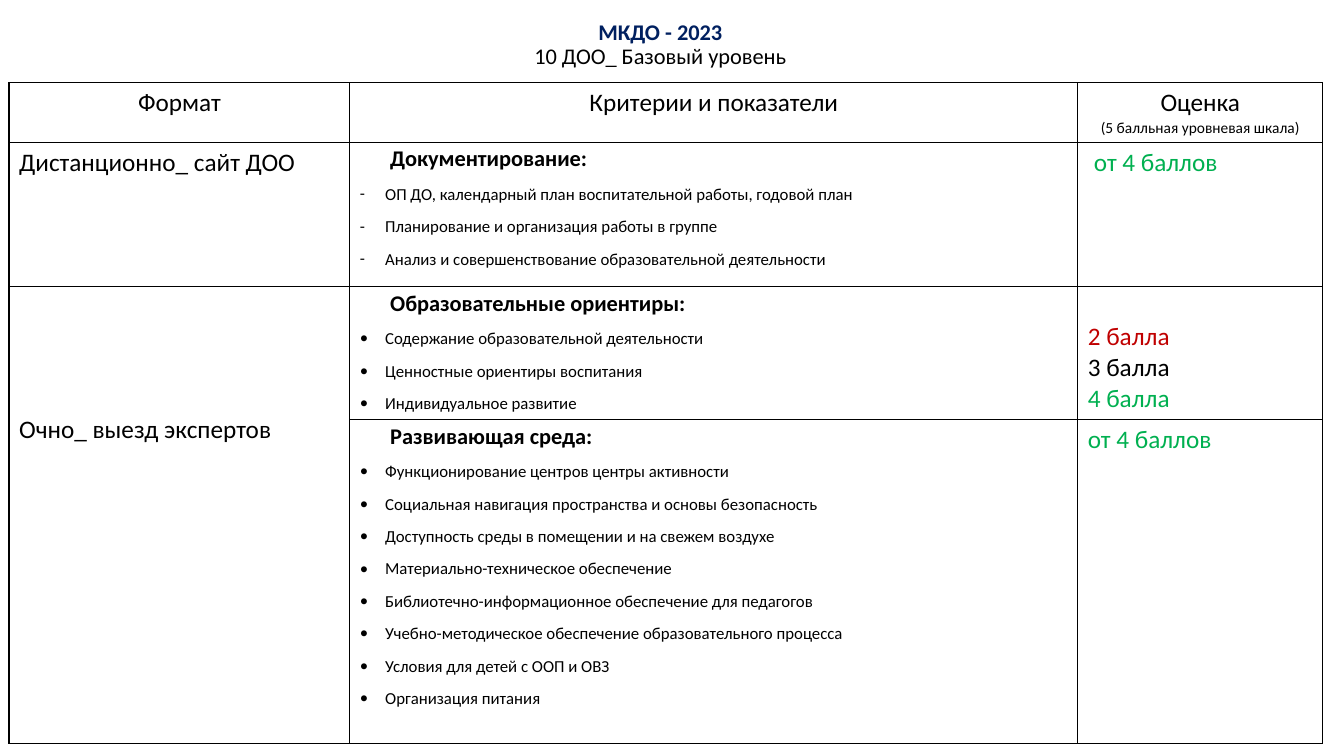
from pptx import Presentation
from pptx.util import Inches, Pt
from pptx.dml.color import RGBColor as Rgb
from pptx.enum.text import PP_ALIGN as Al, MSO_ANCHOR as Anchor
from pptx.oxml import parse_xml
from pptx.oxml.ns import nsdecls

INK = {"black": "000000", "white": "FFFFFF", "navy": "002060",
       "green": "00B050", "red": "C00000"}


class Deck:
    font = "Calibri"

    def __init__(self):
        self.prs = Presentation()
        self.prs.slide_width, self.prs.slide_height = Inches(13.33), Inches(7.5)
        self.slide = self.prs.slides.add_slide(self.prs.slide_layouts[6])

    def para(self, frame, text, size=18, color="black", bold=False, align=Al.LEFT,
             line=None, before=None, left=0, hang=0, mark=None):
        first = frame.paragraphs[0]
        par = frame.add_paragraph() if first.runs else first
        par.alignment = align
        if line:
            par.line_spacing = line
        if before:
            par.space_before = Pt(before)
        run = par.add_run()
        run.text = text
        run.font.name, run.font.size, run.font.bold = self.font, Pt(size), bold
        run.font.color.rgb = Rgb.from_string(INK[color])
        props = par._p.get_or_add_pPr()
        props.set("marL", str(Inches(left)))
        props.set("indent", str(Inches(hang)))
        if mark:
            props.append(parse_xml(f'<a:buFont {nsdecls("a")} typeface="{self.font}"/>'))
            props.append(parse_xml(f'<a:buChar {nsdecls("a")} char="{mark}"/>'))

    def title(self, x, y, w, h, lines):
        frame = self.slide.shapes.add_textbox(
            Inches(x), Inches(y), Inches(w), Inches(h)).text_frame
        frame.word_wrap = True
        frame.vertical_anchor = Anchor.TOP
        frame.margin_top = frame.margin_bottom = 0
        for text, color, bold in lines:
            self.para(frame, text, 16, color, bold, Al.CENTER, 0.9)

    def table(self, x, y, cols, rows):
        grid = self.slide.shapes.add_table(
            len(rows), len(cols), Inches(x), Inches(y),
            Inches(sum(cols)), Inches(sum(rows))).table
        grid.first_row = grid.horz_banding = False
        for col, wide in zip(grid.columns, cols):
            col.width = Inches(wide)
        for row, high in zip(grid.rows, rows):
            row.height = Inches(high)
        for cell in grid.iter_cells():
            self.frame(cell)
        return grid

    def frame(self, cell):
        cell.fill.solid()
        cell.fill.fore_color.rgb = Rgb.from_string(INK["white"])
        props = cell._tc.get_or_add_tcPr()
        for spot, side in enumerate("LRTB"):
            props.insert(spot, parse_xml(
                f'<a:ln{side} {nsdecls("a")} w="{Pt(1)}"><a:solidFill>'
                f'<a:srgbClr val="{INK["black"]}"/></a:solidFill></a:ln{side}>'))

    def topic(self, cell, head, items, mark):
        frame = cell.text_frame
        self.para(frame, head, 16, bold=True, line=0.9, before=10, left=0.3)
        for item in items:
            self.para(frame, item, 12, line=0.9, before=10,
                      left=0.25, hang=-0.25, mark=mark)


def main():
    deck = Deck()

    # Title
    deck.title(0.68, 0.21, 11.74, 0.55, [
        ("МКДО - 2023", "navy", True),
        ("10 ДОО_ Базовый уровень", "black", False)])

    # Table grid
    grid = deck.table(0.09, 0.82, [3.38, 7.22, 2.43], [0.59, 1.43, 1.32, 3.22])
    grid.cell(2, 0).merge(grid.cell(3, 0))

    # Header row
    for col, text in enumerate(["Формат", "Критерии и показатели", "Оценка"]):
        deck.para(grid.cell(0, col).text_frame, text, align=Al.CENTER)
    deck.para(grid.cell(0, 2).text_frame, "(5 балльная уровневая шкала)", 11,
              align=Al.CENTER)

    # Formats
    deck.para(grid.cell(1, 0).text_frame, "Дистанционно_ сайт ДОО")
    visit = grid.cell(2, 0)
    visit.margin_top = Inches(1.27)
    deck.para(visit.text_frame, "Очно_ выезд экспертов")

    # Criteria
    topics = [
        ("Документирование:", "-", [
            "ОП ДО, календарный план воспитательной работы, годовой план",
            "Планирование и организация работы в группе",
            "Анализ и совершенствование образовательной деятельности"]),
        ("Образовательные ориентиры:", "•", [
            "Содержание образовательной деятельности",
            "Ценностные ориентиры воспитания",
            "Индивидуальное развитие"]),
        ("Развивающая среда:", "•", [
            "Функционирование центров центры активности",
            "Социальная навигация пространства и основы безопасность",
            "Доступность среды в помещении и на свежем воздухе",
            "Материально-техническое обеспечение",
            "Библиотечно-информационное обеспечение для педагогов",
            "Учебно-методическое обеспечение образовательного процесса",
            "Условия для детей с ООП и ОВЗ",
            "Организация питания"])]
    for row, (head, mark, items) in enumerate(topics, 1):
        deck.topic(grid.cell(row, 1), head, items, mark)

    # Scores
    deck.para(grid.cell(1, 2).text_frame, "от 4 баллов", color="green", left=0.06)
    score = grid.cell(2, 2)
    score.margin_top = Inches(0.35)
    for num, color in [(2, "red"), (3, "black"), (4, "green")]:
        deck.para(score.text_frame, f"{num} балла", color=color)
    deck.para(grid.cell(3, 2).text_frame, "от 4 баллов", color="green")

    deck.prs.save("out.pptx")


if __name__ == "__main__":
    main()
